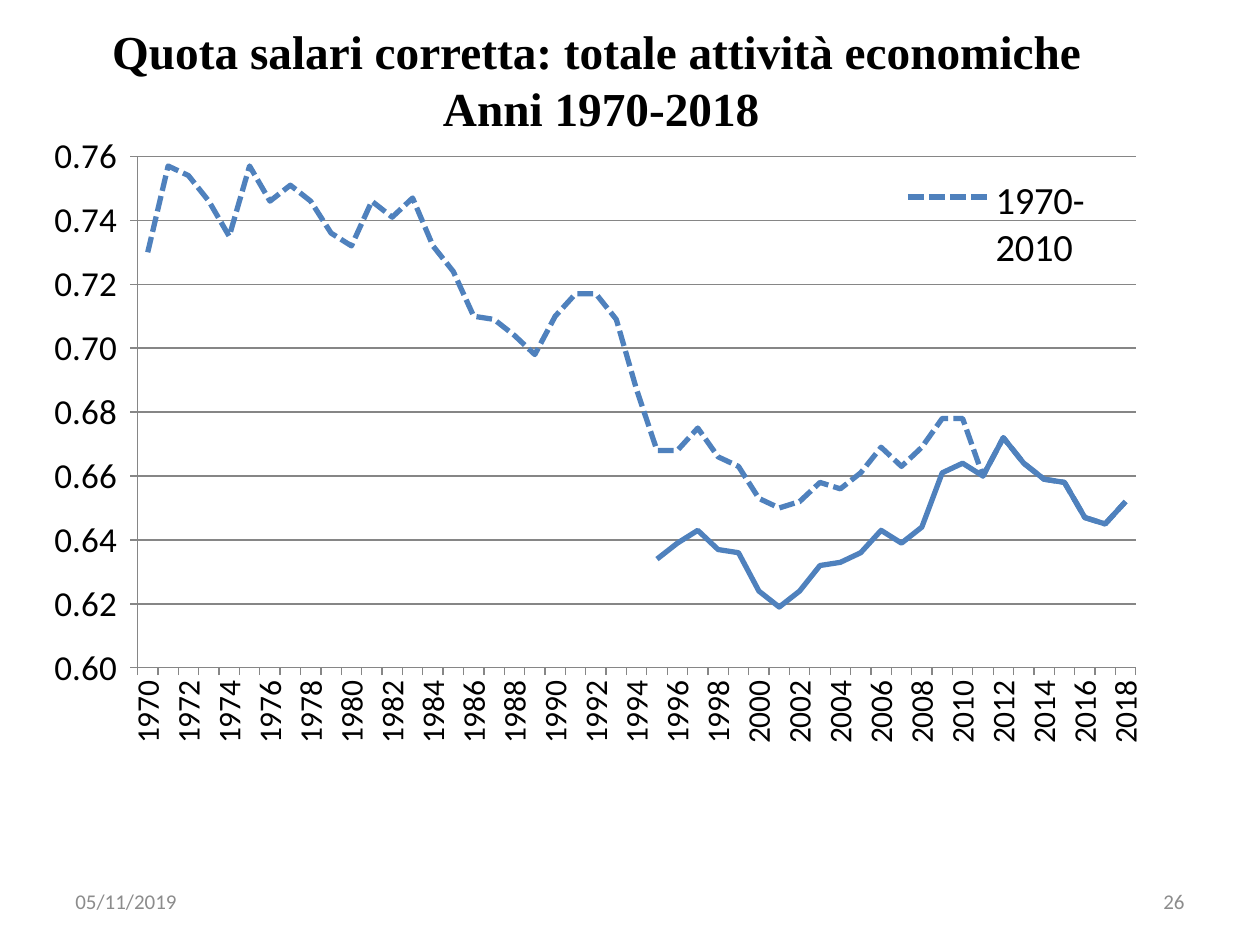
"""Build the slide on the adjusted wage share, 1970-2018."""
from lxml.etree import SubElement
from pptx import Presentation
from pptx.chart.data import CategoryChartData
from pptx.dml.color import RGBColor
from pptx.enum.chart import XL_CHART_TYPE, XL_LEGEND_POSITION, XL_TICK_MARK
from pptx.enum.dml import MSO_LINE
from pptx.enum.text import MSO_ANCHOR, MSO_AUTO_SIZE, PP_ALIGN
from pptx.oxml import parse_xml
from pptx.oxml.ns import nsdecls, qn
from pptx.util import Inches, Pt

YEARS = range(1970, 2019)
OLD_SHARES = [
    0.73, 0.757, 0.754, 0.746, 0.735, 0.757, 0.746, 0.751, 0.746, 0.736,
    0.732, 0.746, 0.741, 0.747, 0.732, 0.724, 0.71, 0.709, 0.704, 0.698,
    0.71, 0.717, 0.717, 0.709, 0.687, 0.668, 0.668, 0.675, 0.666, 0.663,
    0.653, 0.65, 0.652, 0.658, 0.656, 0.661, 0.669, 0.663, 0.669, 0.678, 0.678,
]
NEW_SHARES = [
    0.634, 0.639, 0.643, 0.637, 0.636, 0.624, 0.619, 0.624, 0.632, 0.633,
    0.636, 0.643, 0.639, 0.644, 0.661, 0.664,
]
COMMON_SHARES = [0.66, 0.672, 0.664, 0.659, 0.658, 0.647, 0.645, 0.652]


def color(value):
    return RGBColor.from_string(value)


def manual_layout(left, top, width, height, inner=False):
    target = '<c:layoutTarget val="inner"/>' if inner else ""
    return parse_xml(
        f'<c:layout {nsdecls("c")}><c:manualLayout>{target}'
        '<c:xMode val="edge"/><c:yMode val="edge"/>'
        f'<c:x val="{left}"/><c:y val="{top}"/>'
        f'<c:w val="{width}"/><c:h val="{height}"/>'
        "</c:manualLayout></c:layout>"
    )


def remove_layout(element):
    for layout in element.findall(qn("c:layout")):
        element.remove(layout)


class SlideBuilder:
    """Hold the style and the current slide."""

    body_font = "Calibri"
    title_font = "Times New Roman"
    text_color = "000000"
    muted_color = "8C8C8C"
    line_color = "4F81BD"
    grid_color = "868686"

    def __init__(self, presentation):
        self.slide = presentation.slides.add_slide(presentation.slide_layouts[5])

    def style_font(self, font, size, name, font_color, bold=False):
        font.size, font.name, font.bold = Pt(size), name, bold
        font.color.rgb = color(font_color)

    def title(self, text, left, top, width, height):
        shape = self.slide.shapes.title
        shape.left, shape.top = Inches(left), Inches(top)
        shape.width, shape.height = Inches(width), Inches(height)
        frame = shape.text_frame
        frame.text = text
        frame.auto_size = MSO_AUTO_SIZE.NONE
        frame.vertical_anchor = MSO_ANCHOR.BOTTOM
        frame.margin_bottom = Inches(0.29)
        paragraph = frame.paragraphs[0]
        paragraph.alignment = PP_ALIGN.CENTER
        for run in paragraph.runs:
            self.style_font(run.font, 27, self.title_font, self.text_color, True)

    def footer(self, text, left, alignment):
        shape = self.slide.shapes.add_textbox(
            Inches(left), Inches(6.95), Inches(2.33), Inches(0.4))
        frame = shape.text_frame
        frame.word_wrap = True
        frame.vertical_anchor = MSO_ANCHOR.MIDDLE
        frame.text = text
        paragraph = frame.paragraphs[0]
        paragraph.alignment = alignment
        self.style_font(paragraph.runs[0].font, 12, self.body_font, self.muted_color)

    def line_chart(self, categories, series, left, top, width, height):
        data = CategoryChartData()
        data.categories = categories
        for name, values, _ in series:
            data.add_series(name, values)
        chart = self.slide.shapes.add_chart(
            XL_CHART_TYPE.LINE, Inches(left), Inches(top),
            Inches(width), Inches(height), data).chart
        chart.has_title = False
        self.style_font(chart.font, 10, self.body_font, self.text_color)
        for plotted, (_, _, dash) in zip(chart.plots[0].series, series):
            plotted.smooth = False
            plotted.format.line.width = Pt(3)
            plotted.format.line.color.rgb = color(self.line_color)
            plotted.format.line.dash_style = dash
        plot_area = chart.plots[0]._element.getparent()
        remove_layout(plot_area)
        plot_area.insert(0, manual_layout(0.081, 0.033, 0.865, 0.798, inner=True))
        return chart

    def axis(self, axis, size):
        axis.major_tick_mark = XL_TICK_MARK.OUTSIDE
        axis.minor_tick_mark = XL_TICK_MARK.NONE
        axis.format.line.color.rgb = color(self.grid_color)
        self.style_font(axis.tick_labels.font, size, self.body_font, self.text_color)

    def year_axis(self, axis, label_step):
        self.axis(axis, 18)
        axis.has_major_gridlines = False
        element = axis._element
        element.find(qn("c:txPr")).find(qn("a:bodyPr")).set("rot", "-5400000")
        skip = SubElement(element, qn("c:tickLblSkip"))
        skip.set("val", str(label_step))
        element.find(qn("c:lblOffset")).addnext(skip)

    def share_axis(self, axis, minimum, maximum, step):
        self.axis(axis, 20)
        axis.minimum_scale, axis.maximum_scale = minimum, maximum
        axis.major_unit = step
        axis.tick_labels.number_format = "#,##0.00_ ;\\-#,##0.00\\ "
        axis.tick_labels.number_format_is_linked = False
        axis.has_major_gridlines = True
        axis.major_gridlines.format.line.color.rgb = color(self.grid_color)

    def legend(self, chart, hidden_entry):
        chart.has_legend = True
        legend = chart.legend
        legend.position = XL_LEGEND_POSITION.RIGHT
        legend.include_in_layout = False
        self.style_font(legend.font, 22, self.body_font, self.text_color)
        element = legend._element
        remove_layout(element)
        position = element.find(qn("c:legendPos"))
        position.addnext(manual_layout(0.73, 0.06, 0.19, 0.16))
        position.addnext(parse_xml(
            f'<c:legendEntry {nsdecls("c")}><c:idx val="{hidden_entry}"/>'
            '<c:delete val="1"/></c:legendEntry>'))


def main():
    presentation = Presentation()
    presentation.slide_width, presentation.slide_height = Inches(10), Inches(7.5)
    builder = SlideBuilder(presentation)
    builder.footer("05/11/2019", 0.5, PP_ALIGN.LEFT)
    builder.footer("26", 7.17, PP_ALIGN.RIGHT)
    builder.title(
        "Quota salari corretta: totale attività economiche\v Anni 1970-2018",
        0.75, 0.52, 7.97, 0.85)
    missing_years = [None] * (1995 - YEARS.start)
    chart = builder.line_chart(
        [str(year) for year in YEARS],
        [("1970-2010", OLD_SHARES + COMMON_SHARES, MSO_LINE.SQUARE_DOT),
         ("1995-2018", missing_years + NEW_SHARES + COMMON_SHARES, MSO_LINE.SOLID)],
        0.35, 1.07, 9.16, 5.09)
    builder.year_axis(chart.category_axis, 2)
    builder.share_axis(chart.value_axis, 0.6, 0.76, 0.02)
    builder.legend(chart, 1)
    presentation.save("out.pptx")


if __name__ == "__main__":
    main()
